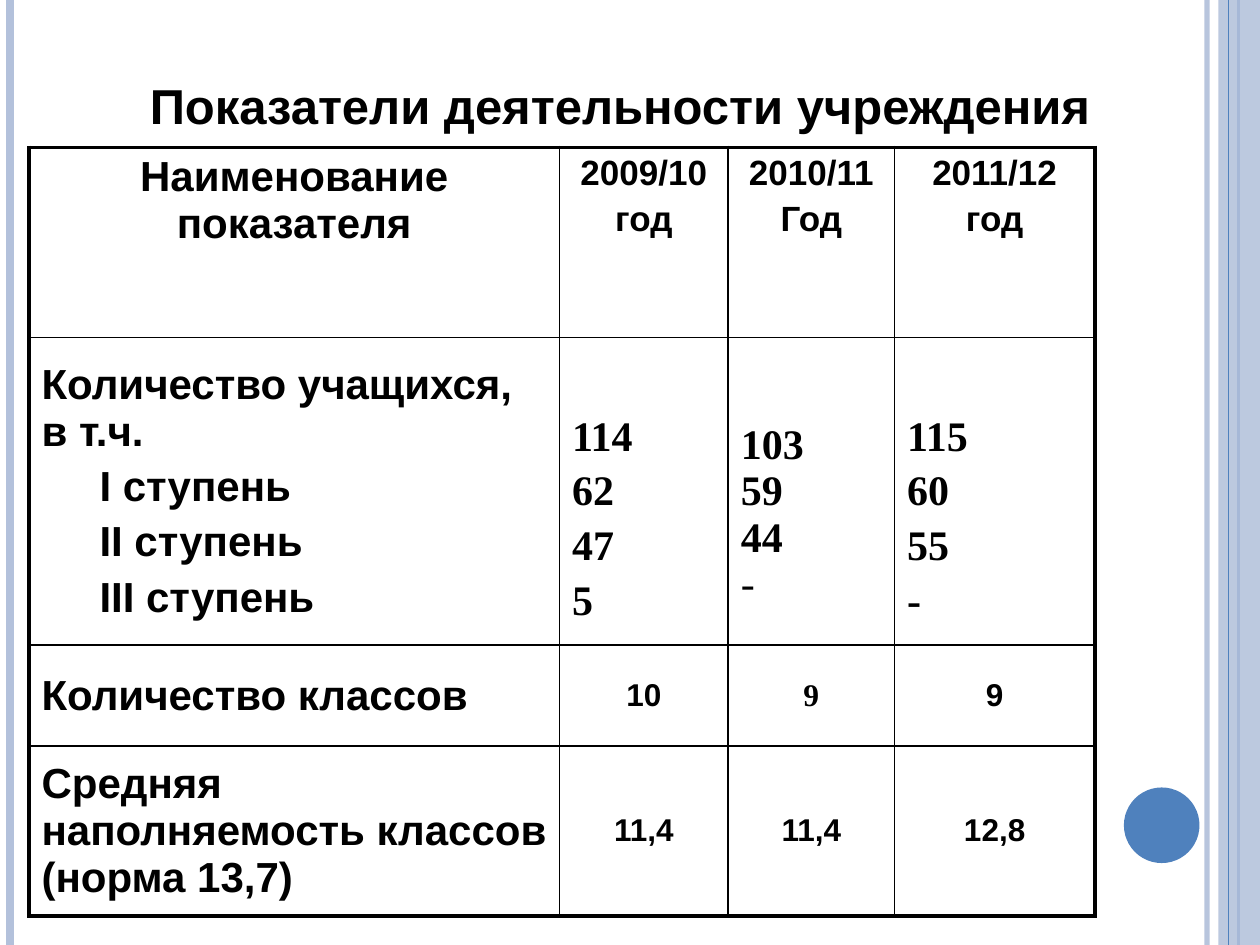
from dataclasses import dataclass

from lxml.etree import SubElement
from pptx import Presentation
from pptx.dml.color import RGBColor
from pptx.enum.shapes import MSO_CONNECTOR as Connector, MSO_SHAPE as Shape
from pptx.enum.text import MSO_ANCHOR as Anchor, PP_ALIGN as Align
from pptx.oxml.ns import qn
from pptx.util import Inches, Pt


@dataclass(frozen=True)
class Theme:
    ink: str = "000000"
    pale: str = "B3C1DB"
    accent: str = "4F81BD"
    sans: str = "Arial"
    serif: str = "Times New Roman"
    title: int = 28
    label: int = 24
    year: int = 20
    value: int = 18
    frame: float = 2.25
    grid: float = 1


@dataclass(frozen=True)
class Entry:
    """Content of one table cell; indent applies to every line after the first."""
    lines: tuple
    size: int
    font: str = Theme.sans
    align: Align = Align.LEFT
    anchor: Anchor = Anchor.MIDDLE
    spacing: float = 0.2
    indent: float = 0
    top: float = 0.05
    light: tuple = ()


class SlideBuilder:
    def __init__(self, slide, theme):
        self.slide = slide
        self.theme = theme

    def set_alpha(self, fill, percent):
        if percent < 100:
            color = fill._xPr.find(".//" + qn("a:srgbClr"))
            SubElement(color, qn("a:alpha"), val=str(percent * 1000))

    def vertical_rule(self, x, color, width, alpha=100):
        rule = self.slide.shapes.add_connector(
            Connector.STRAIGHT, Inches(x), 0, Inches(x), Inches(7.5))
        rule.line.color.rgb = RGBColor.from_string(color)
        rule.line.width = Pt(width)
        self.set_alpha(rule.line.fill, alpha)
        SubElement(rule._element.spPr, qn("a:effectLst"))

    def solid(self, kind, box, color, alpha=100):
        shape = self.slide.shapes.add_shape(kind, *map(Inches, box))
        shape.shadow.inherit = False
        shape.fill.solid()
        shape.fill.fore_color.rgb = RGBColor.from_string(color)
        self.set_alpha(shape.fill, alpha)
        shape.line.fill.background()

    def run(self, paragraph, text, size, font, bold=True):
        run = paragraph.add_run()
        run.text = text
        run.font.size = Pt(size)
        run.font.name = font
        run.font.bold = bold
        run.font.color.rgb = RGBColor.from_string(self.theme.ink)

    def title(self, text, box):
        title = self.slide.shapes.title
        title.left, title.top, title.width, title.height = map(Inches, box)
        title.text_frame.vertical_anchor = Anchor.MIDDLE
        paragraph = title.text_frame.paragraphs[0]
        paragraph.alignment = Align.CENTER
        self.run(paragraph, text, self.theme.title, self.theme.sans)

    def borders(self, cell, widths):
        """Add border lines, given in the order left, right, top, bottom."""
        props = cell._tc.get_or_add_tcPr()
        for position, (side, width) in enumerate(zip("LRTB", widths)):
            line = SubElement(props, qn(f"a:ln{side}"), w=str(Pt(width)))
            fill = SubElement(line, qn("a:solidFill"))
            SubElement(fill, qn("a:srgbClr"), val=self.theme.ink)
            props.insert(position, line)

    def fill_cell(self, cell, entry):
        cell.fill.background()
        cell.vertical_anchor = entry.anchor
        cell.margin_top = Inches(entry.top)
        frame = cell.text_frame
        for number, line in enumerate(entry.lines):
            paragraph = frame.add_paragraph() if number else frame.paragraphs[0]
            paragraph.alignment = entry.align
            paragraph.space_before = Pt(entry.size * entry.spacing if number else 0)
            if number and entry.indent:
                paragraph._p.get_or_add_pPr().set("marL", str(Inches(entry.indent)))
            self.run(paragraph, line, entry.size, entry.font, line not in entry.light)

    def table(self, box, widths, heights, rows):
        table = self.slide.shapes.add_table(
            len(heights), len(widths), *map(Inches, box)).table
        table.first_row = table.horz_banding = False
        for column, width in zip(table.columns, widths):
            column.width = Inches(width)
        for row, height in zip(table.rows, heights):
            row.height = Inches(height)
        last_row, last_column = len(heights) - 1, len(widths) - 1
        for r, entries in enumerate(rows):
            for c, entry in enumerate(entries):
                cell = table.cell(r, c)
                self.fill_cell(cell, entry)
                outer = (c == 0, c == last_column, r == 0, r == last_row)
                self.borders(cell, [self.theme.frame if edge else self.theme.grid
                                    for edge in outer])


def label(*lines, **style):
    return Entry(lines, Theme.label, **style)


def year(*lines):
    return Entry(lines, Theme.year, align=Align.CENTER, anchor=Anchor.TOP)


def pupils(*counts, **style):
    return Entry(counts, Theme.label, Theme.serif, **{"top": 0.49, **style})


def value(text, font=Theme.sans):
    return Entry((text,), Theme.value, font, Align.CENTER)


def main():
    theme = Theme()
    deck = Presentation()
    deck.slide_width, deck.slide_height = Inches(10), Inches(7.5)
    builder = SlideBuilder(deck.slides.add_slide(deck.slide_layouts[5]), theme)

    builder.vertical_rule(9.58, theme.pale, 3, alpha=93)
    builder.vertical_rule(0.08, theme.pale, 4.5)
    builder.vertical_rule(9.83, theme.accent, 1.5)
    builder.solid(Shape.RECTANGLE, (9.67, 0, 0.33, 7.5), theme.pale, alpha=87)
    builder.vertical_rule(9.75, theme.accent, 0.75)
    builder.solid(Shape.OVAL, (8.92, 6.25, 0.6, 0.6), theme.accent)

    rows = [
        [label("Наименование показателя", align=Align.CENTER, anchor=Anchor.TOP),
         year("2009/10", "год"), year("2010/11", "Год"), year("2011/12", "год")],
        [label("Количество учащихся, в т.ч.", "I ступень", "II ступень",
               "III ступень", indent=0.46),
         pupils("114", "62", "47", "5"),
         pupils("103", "59", "44", "-", spacing=0, top=0.42, light=("-",)),
         pupils("115", "60", "55", "-")],
        [label("Количество классов"),
         value("10"), value("9", theme.serif), value("9")],
        [label("Средняя наполняемость классов (норма 13,7)"),
         value("11,4"), value("11,4"), value("12,8")],
    ]
    builder.table((0.23, 1.17, 8.47, 6.09), (4.21, 1.34, 1.32, 1.59),
                  (1.51, 2.44, 0.8, 1.35), rows)
    builder.title("Показатели деятельности учреждения", (0.31, 0.55, 9.22, 0.57))
    deck.save("out.pptx")


if __name__ == "__main__":
    main()
